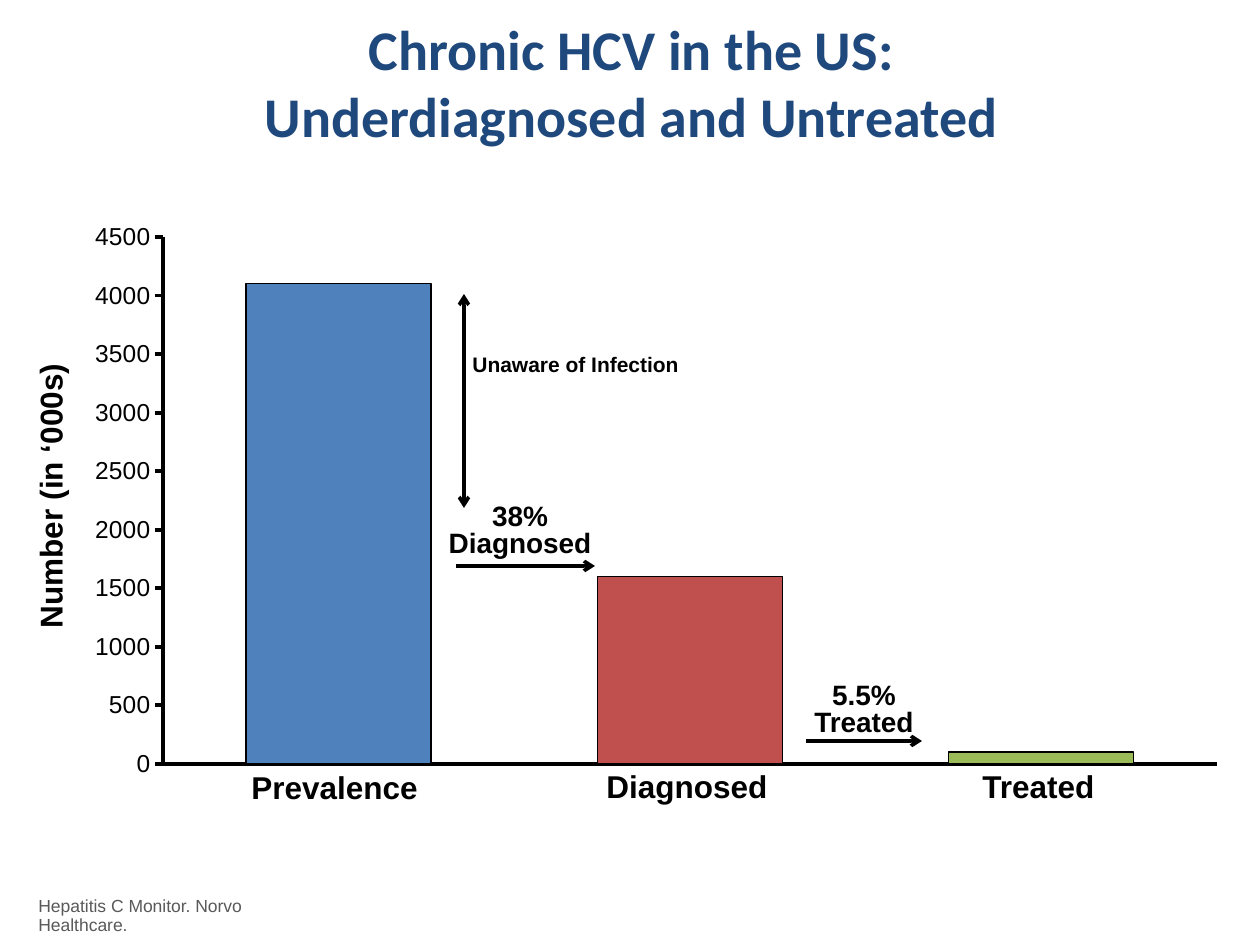
import pptx
import pptx.chart.data
import pptx.dml.color
import pptx.enum.chart
import pptx.enum.text
import pptx.oxml
import pptx.oxml.ns
import pptx.util

SCALE = 914400 / 126  # EMU in one px
BLACK, NAVY, GRAY = "000000", "1F497D", "595959"

# Content: name, value, fill
BARS = [
    ("Prevalence", 4100, "4F81BD"),
    ("Diagnosed", 1600, "C0504D"),
    ("Treated", 100, "9BBB59"),
]
CHART = (72, 212, 1169, 578)
PLOT = (163, 237, 1054, 527)

TITLE = ["Chronic HCV in the US:\vUnderdiagnosed and Untreated"]
# Text lines, box, size, line spacing, centred
NOTES = [
    (["38%", "Diagnosed"], (435, 499, 170, 68), 16, 0.8, True),
    (["5.5%", "Treated"], (801, 678, 126, 68), 16, 0.8, True),
    (["Unaware of Infection"], (460, 350, 234, 33), 12, 0.8, False),
]
NAMES = [(238, 766, 193, 47), (593, 765, 188, 47), (969, 765, 139, 47)]
# Start, end, heads
ARROWS = [
    ((456, 566), (595, 566), ["tailEnd"]),
    ((806, 741), (922, 741), ["tailEnd"]),
    ((464, 294), (464, 508), ["headEnd", "tailEnd"]),
]


def px(*vals):
    return [pptx.util.Emu(round(v * SCALE)) for v in vals]


def color(code):
    return pptx.dml.color.RGBColor.from_string(code)


def style(font, size, code=BLACK, bold=True, face="Arial"):
    font.name, font.size, font.bold = face, pptx.util.Pt(size), bold
    font.color.rgb = color(code)


def stroke(line, width):
    line.color.rgb = color(BLACK)
    line.width = pptx.util.Pt(width)


def add_text(slide, lines, box, size, space=None, mid=True, wrap=False, **look):
    shape = slide.shapes.add_textbox(*px(*box))
    frame = shape.text_frame
    frame.word_wrap = wrap
    if wrap:
        frame.vertical_anchor = pptx.enum.text.MSO_ANCHOR.MIDDLE
    else:
        frame.auto_size = pptx.enum.text.MSO_AUTO_SIZE.SHAPE_TO_FIT_TEXT
    frame.text = "\n".join(lines)
    align = pptx.enum.text.PP_ALIGN
    for para in frame.paragraphs:
        para.alignment = align.CENTER if mid else align.LEFT
        para.line_spacing = space
        style(para.font, size, **look)
    return shape


def add_arrow(slide, start, end, heads):
    kind = pptx.enum.shapes.MSO_CONNECTOR.STRAIGHT
    arrow = slide.shapes.add_connector(kind, *px(*start, *end))
    stroke(arrow.line, 2)
    line = arrow.line._get_or_add_ln()
    for head in heads:
        pptx.oxml.ns.qn("a:" + head)
        line.append(pptx.oxml.parse_xml(
            f'<a:{head} {pptx.oxml.ns.nsdecls("a")} type="arrow"/>'))
    arrow._element.spPr.append(pptx.oxml.parse_xml(
        f'<a:effectLst {pptx.oxml.ns.nsdecls("a")}/>'))


def set_plot(chart):
    # Fix the inner plot area as shares of the chart frame
    left, top, wide, high = CHART
    x, y, w, h = PLOT
    parts = {"x": (x - left) / wide, "y": (y - top) / high,
             "w": w / wide, "h": h / high}
    modes = '<c:xMode val="edge"/><c:yMode val="edge"/>'
    sizes = "".join(f'<c:{k} val="{v:.4f}"/>' for k, v in parts.items())
    area = chart._chartSpace.chart.plotArea
    for old in area.findall(pptx.oxml.ns.qn("c:layout")):
        area.remove(old)
    area.insert(0, pptx.oxml.parse_xml(
        f'<c:layout {pptx.oxml.ns.nsdecls("c")}><c:manualLayout>'
        f'<c:layoutTarget val="inner"/>{modes}{sizes}'
        '</c:manualLayout></c:layout>'))


def add_bars(slide):
    enum = pptx.enum.chart
    data = pptx.chart.data.CategoryChartData()
    data.categories = [name for name, _, _ in BARS]
    data.add_series("Series 1", [val for _, val, _ in BARS])
    chart = slide.shapes.add_chart(
        enum.XL_CHART_TYPE.COLUMN_CLUSTERED, *px(*CHART), data).chart
    chart.has_legend = chart.has_title = False
    style(chart.font, 14, bold=False)
    set_plot(chart)

    plot = chart.plots[0]
    plot.gap_width = 90
    plot.vary_by_categories = False
    for i, (_, _, fill) in enumerate(BARS):
        point = plot.series[0].points[i].format
        point.fill.solid()
        point.fill.fore_color.rgb = color(fill)
        stroke(point.line, 0.75)

    cats, vals = chart.category_axis, chart.value_axis
    cats.tick_label_position = enum.XL_TICK_LABEL_POSITION.NONE
    cats.major_tick_mark = enum.XL_TICK_MARK.NONE
    vals.major_tick_mark = enum.XL_TICK_MARK.OUTSIDE
    vals.minimum_scale, vals.maximum_scale, vals.major_unit = 0, 4500, 500
    style(vals.tick_labels.font, 14, bold=False)
    for axis in (cats, vals):
        axis.has_major_gridlines = False
        stroke(axis.format.line, 2.25)


def main():
    deck = pptx.Presentation()
    deck.slide_width, deck.slide_height = px(1260, 945)
    slide = deck.slides.add_slide(deck.slide_layouts[6])

    # Title and chart
    add_text(slide, TITLE, (26, 4, 1211, 155), 32, wrap=True,
             code=NAVY, face="Calibri")
    add_bars(slide)

    # Axis title, source and bar names
    side = add_text(slide, ["Number (in ‘000s)"], (-96, 471, 292, 50), 18)
    side.rotation = 270
    add_text(slide, ["Hepatitis C Monitor. Norvo Healthcare."],
             (26, 891, 321, 32), 10, 0.9, False, code=GRAY, bold=False)
    for (name, _, _), box in zip(BARS, NAMES):
        add_text(slide, [name], box, 18, 0.9)

    # Notes and arrows
    for note in NOTES:
        add_text(slide, *note)
    for arrow in ARROWS:
        add_arrow(slide, *arrow)

    deck.save("out.pptx")


if __name__ == "__main__":
    main()
